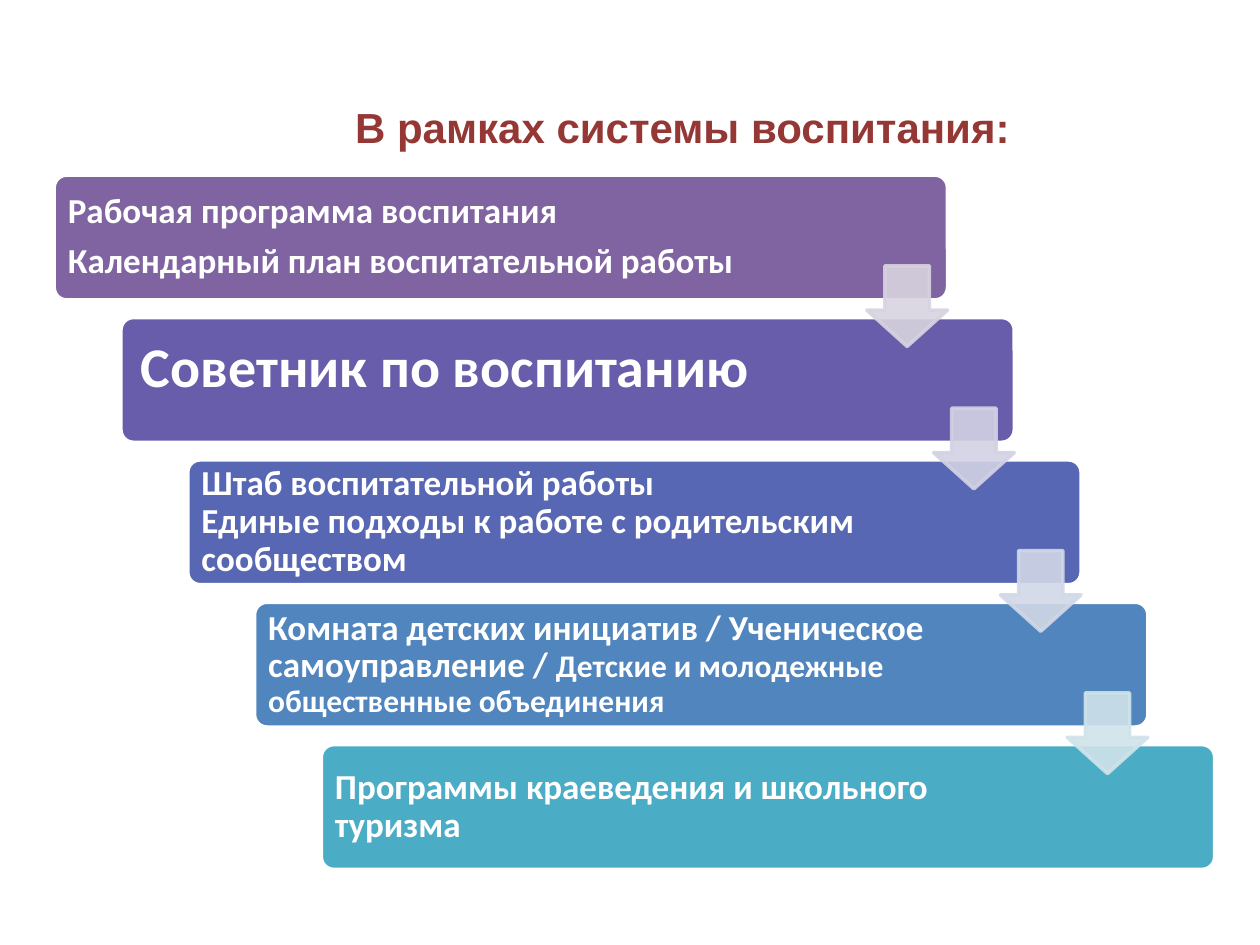
from lxml import etree
from pptx import Presentation
from pptx.dml.color import RGBColor
from pptx.enum import shapes, text
from pptx.oxml.ns import qn
from pptx.util import Inches, Pt

WHITE = RGBColor(0xFF, 0xFF, 0xFF)
TITLE_RED = RGBColor(0x95, 0x37, 0x35)
BAR_COLORS = [RGBColor.from_string(c) for c in
              ("8064A2", "685DAB", "5767B4", "5185BD", "4BACC6")]
ARROW_COLORS = [RGBColor.from_string(c) for c in
                ("D8D3E0", "D2D2E4", "D1D8E7", "D0E3EA")]

# Each step of the staircase moves right and down by the same amount
STEP_X, STEP_Y = 0.53, 1.13

# Each step: paragraphs, each a list of (text, size) runs
STEPS = [
    [[("Рабочая программа воспитания", 20)],
     [("Календарный план воспитательной работы", 20)]],
    [[("Советник по воспитанию", 32)]],
    [[("Штаб воспитательной работы", 20)],
     [("Единые подходы к работе с родительским сообществом", 20)]],
    [[("Комната детских инициатив / Ученическое самоуправление / ", 20),
      ("Детские и молодежные общественные объединения", 18)]],
    [[("Программы краеведения и школьного туризма", 20)]],
]


def add_run(p, content, size=20, font="Calibri", color=WHITE, bold=True):
    r = p.add_run()
    r.text = content
    r.font.size = Pt(size)
    r.font.name = font
    r.font.bold = bold
    r.font.color.rgb = color


def add_block(slide, kind, x, y, w, h, fill, line, adjustments):
    sp = slide.shapes.add_shape(kind, Inches(x), Inches(y), Inches(w), Inches(h))
    sp.shadow.inherit = False
    sp.fill.solid()
    sp.fill.fore_color.rgb = fill
    sp.line.color.rgb = line
    sp.line.width = Pt(2)
    for i, value in enumerate(adjustments):
        sp.adjustments[i] = value
    return sp


def add_title(slide, content):
    sp = slide.shapes.add_textbox(Inches(2.72), Inches(0.7), Inches(5.45), Inches(0.53))
    tf = sp.text_frame
    tf.word_wrap = False
    p = tf.paragraphs[0]
    p.alignment = text.PP_ALIGN.JUSTIFY
    p.line_spacing = 1.15
    add_run(p, content, size=24, font="Arial", color=TITLE_RED)


def add_bar(slide, index, paragraphs):
    sp = add_block(slide, shapes.MSO_SHAPE.ROUNDED_RECTANGLE,
                   0.43 + index * STEP_X, 1.39 + index * STEP_Y, 7.09, 0.99,
                   BAR_COLORS[index], WHITE, [0.1])
    # The headline step sits at the top; the right margin leaves room for arrows
    headline = paragraphs[0][0][1] > 20
    tf = sp.text_frame
    tf.word_wrap = True
    tf.vertical_anchor = text.MSO_ANCHOR.TOP if headline else text.MSO_ANCHOR.MIDDLE
    tf.margin_left = Inches(0.13 if headline else 0.08)
    tf.margin_right = Inches(1.25)
    tf.margin_top = tf.margin_bottom = Inches(0.08)
    for i, runs in enumerate(paragraphs):
        p = tf.add_paragraph() if i else tf.paragraphs[0]
        p.alignment = text.PP_ALIGN.LEFT
        p.line_spacing = 1.0 if headline else 0.9
        if index == 0:
            p.space_after = Pt(7)
        for content, size in runs:
            add_run(p, content, size=size)


def add_arrow(slide, index):
    color = ARROW_COLORS[index]
    sp = add_block(slide, shapes.MSO_SHAPE.DOWN_ARROW,
                   6.88 + index * STEP_X, 2.11 + index * STEP_Y, 0.64, 0.64,
                   color, color, [0.55, 0.45])
    # 90 % opacity for both fill and line
    for clr in sp._element.spPr.iter(qn("a:srgbClr")):
        etree.SubElement(clr, qn("a:alpha")).set("val", "90000")


def main():
    prs = Presentation()
    prs.slide_width, prs.slide_height = Inches(10), Inches(7.5)
    slide = prs.slides.add_slide(prs.slide_layouts[6])

    add_title(slide, "В рамках системы воспитания:")
    for i, paragraphs in enumerate(STEPS):
        add_bar(slide, i, paragraphs)
    for i in range(len(ARROW_COLORS)):
        add_arrow(slide, i)

    prs.save("out.pptx")


if __name__ == "__main__":
    main()
